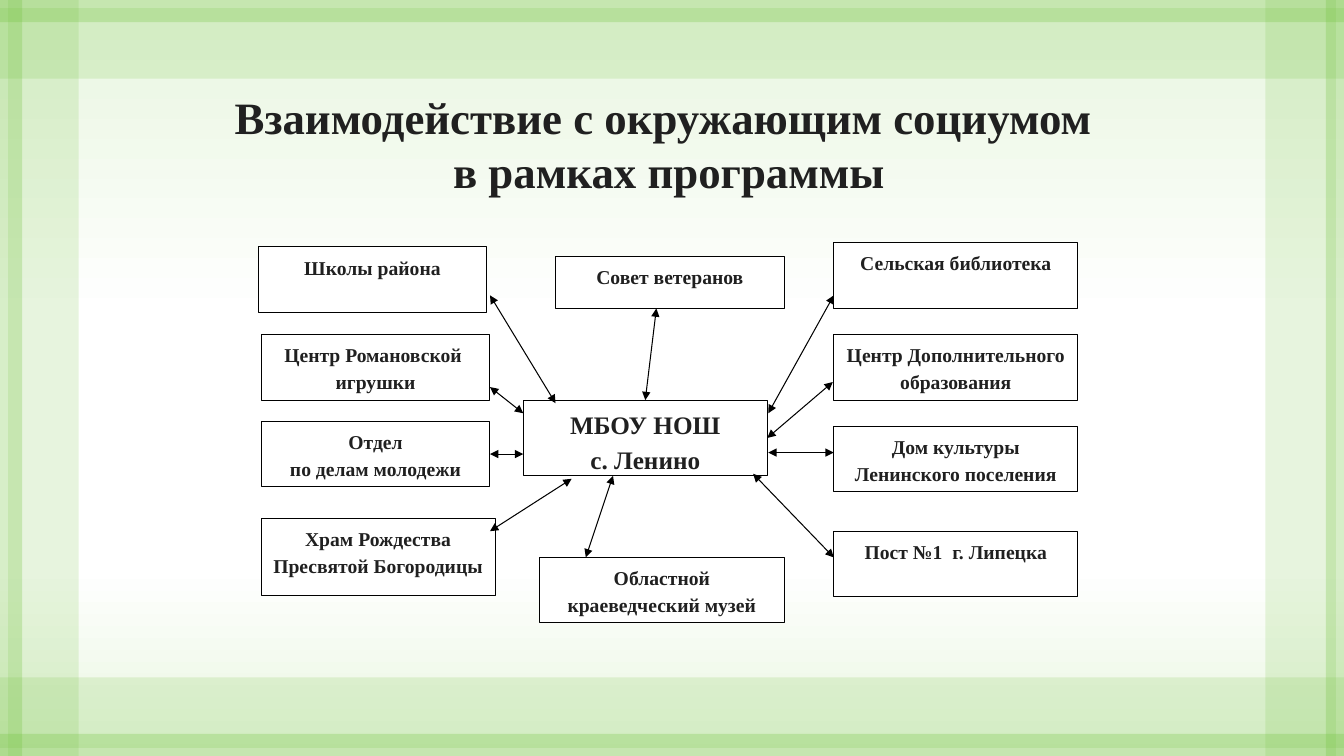
from lxml import etree
from pptx import Presentation
from pptx.dml.color import RGBColor
from pptx.enum.shapes import MSO_CONNECTOR, MSO_SHAPE
from pptx.enum.text import MSO_ANCHOR, PP_ALIGN
from pptx.oxml.ns import qn
from pptx.util import Inches, Pt

RECTANGLE = MSO_SHAPE.RECTANGLE
STRAIGHT = MSO_CONNECTOR.STRAIGHT
CENTER = PP_ALIGN.CENTER
TOP, BOTTOM = MSO_ANCHOR.TOP, MSO_ANCHOR.BOTTOM
TOP_SIDE, RIGHT_SIDE = 0, 3

GREEN = RGBColor(0x72, 0xC2, 0x3C)
PALE_GREEN = RGBColor(0xE7, 0xF5, 0xDE)
WHITE = RGBColor(0xFF, 0xFF, 0xFF)
BLACK = RGBColor(0, 0, 0)
INK = RGBColor(0x20, 0x20, 0x20)

COLUMNS, ROWS = 133.3, 75
BACKGROUND_STOPS = [(0, PALE_GREEN), (42, WHITE), (75, WHITE), (100, PALE_GREEN)]

# Bands of the frame: left, top, width, height, opacity in percent
FRAME_BANDS = [
    (0, 0.8, COLUMNS, 7, 17), (0, 0, COLUMNS, 2.2, 28),
    (0.8, 0, 7, ROWS, 17), (0, 0, 2.2, ROWS, 28),
    (125.5, 0, 7, ROWS, 17), (131.5, 0, 1.8, ROWS, 28),
    (0, 67.2, COLUMNS, 7, 17), (0, 72.8, COLUMNS, 2.2, 28),
]

# Partners: left, top, width, height, text
PARTNERS = {
    "library": (82.7, 24.1, 24.2, 6.5, "Сельская библиотека"),
    "education": (82.7, 33.2, 24.2, 6.5, "Центр Дополнительного образования"),
    "culture": (82.7, 42.3, 24.2, 6.5, "Дом культуры Ленинского поселения"),
    "post": (82.7, 52.7, 24.2, 6.5, "Пост №1  г. Липецка"),
    "schools": (25.6, 24.5, 22.7, 6.5, "Школы района"),
    "toys": (25.9, 33.2, 22.7, 6.5, "Центр Романовской  игрушки"),
    "youth": (25.9, 41.8, 22.7, 6.5, "Отдел\nпо делам молодежи"),
    "church": (25.9, 51.4, 23.2, 7.7, "Храм Рождества Пресвятой Богородицы"),
    "veterans": (55.1, 25.4, 22.7, 5.2, "Совет ветеранов"),
    "museum": (53.5, 55.3, 24.3, 6.5, "Областной краеведческий музей"),
}
SCHOOL = (51.9, 39.7, 24.2, 7.5, "МБОУ НОШ\nс. Ленино")

FREE_ARROWS = [
    ((58.1, 55.3), (60.8, 47.2)),
    ((56.7, 47.5), (48.6, 52.7)),
    ((51.9, 41), (48.6, 38.4)),
    ((55.1, 40), (48.6, 29.3)),
    ((76.2, 41), (82.7, 29.3)),
    ((76.2, 44.9), (82.7, 44.9)),
    ((82.7, 55.3), (74.7, 47)),
]


class SlideBuilder:
    """Draws on one slide, with lengths in grid columns and rows."""

    font_name = "Times New Roman"
    line_width = Pt(0.75)

    def __init__(self, presentation):
        self.column = presentation.slide_width / COLUMNS
        self.row = presentation.slide_height / ROWS
        self.slide = presentation.slides.add_slide(presentation.slide_layouts[6])

    def place(self, x, y):
        return round(x * self.column), round(y * self.row)

    def background(self, stops):
        fill = self.slide.background.fill
        fill.gradient()
        fill.gradient_angle = 270
        stop_list = next(self.slide.element.iter(qn("a:gsLst")))
        for stop in list(stop_list):
            stop_list.remove(stop)
        for percent, color in stops:
            stop = etree.SubElement(stop_list, qn("a:gs"), pos=str(percent * 1000))
            etree.SubElement(stop, qn("a:srgbClr"), val=str(color))

    def rectangle(self, left, top, width, height, color):
        shape = self.slide.shapes.add_shape(
            RECTANGLE, *self.place(left, top), *self.place(width, height))
        shape.shadow.inherit = False
        shape.fill.solid()
        shape.fill.fore_color.rgb = color
        return shape

    def band(self, left, top, width, height, opacity):
        """Add a translucent strip of the frame."""
        shape = self.rectangle(left, top, width, height, GREEN)
        shape.line.fill.background()
        color = shape.element.spPr.find(qn("a:solidFill"))[0]
        etree.SubElement(color, qn("a:alpha"), val=str(opacity * 1000))

    def set_text(self, shape, text, size, anchor, line_spacing):
        frame = shape.text_frame
        frame.text = text
        frame.word_wrap = True
        frame.vertical_anchor = anchor
        font_values = {"name": self.font_name, "size": Pt(size), "bold": True}
        for paragraph in frame.paragraphs:
            paragraph.alignment = CENTER
            paragraph.line_spacing = line_spacing
            for run in paragraph.runs:
                for name, value in font_values.items():
                    setattr(run.font, name, value)
                run.font.color.rgb = INK

    def title(self, left, top, width, height, text):
        shape = self.slide.shapes.add_textbox(
            *self.place(left, top), *self.place(width, height))
        self.set_text(shape, text, 32, BOTTOM, 1.0)

    def box(self, left, top, width, height, text, size=14):
        shape = self.rectangle(left, top, width, height, WHITE)
        shape.line.color.rgb = BLACK
        shape.line.width = self.line_width
        self.set_text(shape, text, size, TOP, 1.15)
        return shape

    def arrow(self, start, end):
        """Add a line with a head at both ends."""
        connector = self.slide.shapes.add_connector(
            STRAIGHT, *self.place(*start), *self.place(*end))
        connector.line.color.rgb = BLACK
        connector.line.width = self.line_width
        properties = connector.element.spPr
        line = properties.find(qn("a:ln"))
        for tag in ("a:headEnd", "a:tailEnd"):
            etree.SubElement(line, qn(tag), type="triangle")
        etree.SubElement(properties, qn("a:effectLst"))
        return connector


def main():
    presentation = Presentation()
    presentation.slide_width = Inches(13.33)
    presentation.slide_height = Inches(7.5)

    builder = SlideBuilder(presentation)
    builder.background(BACKGROUND_STOPS)
    for band in FRAME_BANDS:
        builder.band(*band)
    builder.title(7.8, 7.9, 117.1, 12.2,
                  "Взаимодействие с окружающим социумом \vв рамках программы")

    partners = {name: builder.box(*values) for name, values in PARTNERS.items()}
    school = builder.box(*SCHOOL, size=18)

    for start, end in FREE_ARROWS:
        builder.arrow(start, end)
    youth_arrow = builder.arrow((51.9, 45.05), (48.6, 45.05))
    youth_arrow.end_connect(partners["youth"], RIGHT_SIDE)
    veterans_arrow = builder.arrow((64, 39.7), (65.1, 30.6))
    veterans_arrow.begin_connect(school, TOP_SIDE)
    education_arrow = builder.arrow((76.1, 43.45), (82.6, 37.9))
    education_arrow.begin_connect(school, RIGHT_SIDE)

    presentation.save("out.pptx")


if __name__ == "__main__":
    main()
